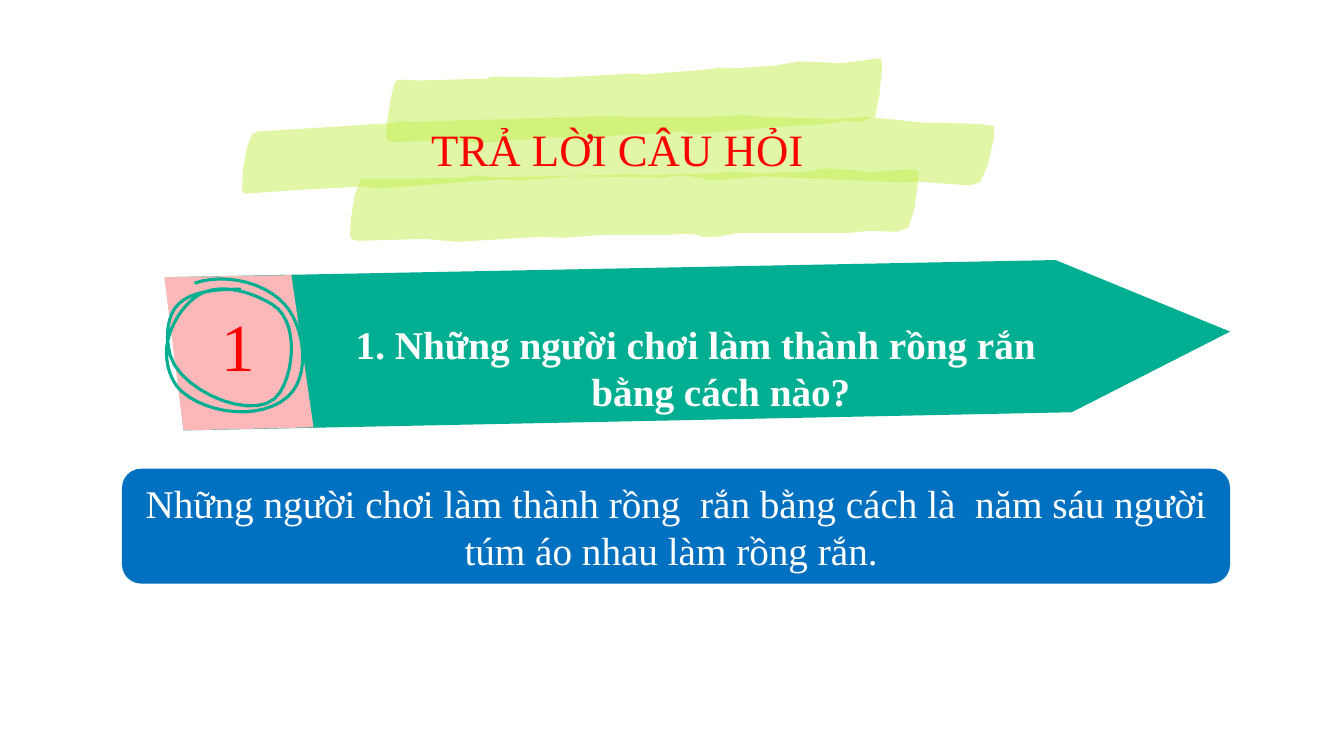
from lxml.etree import SubElement
from pptx import Presentation
from pptx.dml.color import RGBColor
from pptx.enum.shapes import MSO_SHAPE as Preset
from pptx.enum.text import MSO_ANCHOR as Anchor, MSO_AUTO_SIZE as AutoSize, PP_ALIGN as Align
from pptx.oxml.ns import qn
from pptx.util import Inches, Pt

COLORS = {"marker": "C4F150", "arrow": "00AF92", "tail": "FCB8B8",
          "answer": "0070C0", "red": "FF0000", "white": "FFFFFF"}

MARKER_STROKES = [
    [(7.37, 1.14), (7, 1.16), (6.23, 1.16), (6.1, 1.15), (5.7, 1.16), (4.08, 1.21),
     (3.97, 1.2), (3.9, 1.22), (2.63, 1.3), (2.57, 1.3), (2.5, 1.33), (2.45, 1.46),
     (2.41, 1.68), (2.4, 1.87), (2.42, 1.92), (2.44, 1.92), (3.04, 1.88), (3.59, 1.85),
     (3.78, 1.87), (4.94, 1.78), (5.17, 1.79), (5.67, 1.75), (6.6, 1.76), (6.74, 1.74),
     (6.94, 1.76), (7.02, 1.79), (7.2, 1.78), (7.57, 1.75), (8.95, 1.81), (9.09, 1.8),
     (9.61, 1.84), (9.72, 1.81), (9.8, 1.63), (9.86, 1.36), (9.86, 1.25), (9.72, 1.23),
     (9.4, 1.22), (9.19, 1.22), (8.91, 1.19), (8.61, 1.16), (8.25, 1.18), (7.56, 1.16)],
    [(8.16, 1.67), (8.05, 1.7), (7.52, 1.72), (7.25, 1.7), (7.12, 1.72), (6.38, 1.74),
     (6.27, 1.73), (4.96, 1.76), (4.67, 1.74), (4.62, 1.76), (3.79, 1.78), (3.61, 1.77),
     (3.57, 1.79), (3.52, 1.93), (3.48, 2.17), (3.47, 2.34), (3.5, 2.38), (3.56, 2.39),
     (4.21, 2.37), (4.53, 2.4), (5.35, 2.35), (5.57, 2.36), (6, 2.33), (6.66, 2.33),
     (6.78, 2.32), (6.91, 2.33), (6.97, 2.35), (7.1, 2.35), (7.34, 2.31), (8.43, 2.31),
     (8.62, 2.29), (8.89, 2.3), (9.01, 2.26), (9.07, 2.07), (9.11, 1.78), (9.1, 1.69),
     (9.02, 1.68), (8.62, 1.71), (8.5, 1.69)],
    [(8.7, 0.58), (8.33, 0.63), (8.21, 0.62), (7.92, 0.61), (7.7, 0.65), (7.28, 0.68),
     (7.14, 0.67), (7.01, 0.69), (6.37, 0.74), (6.29, 0.73), (5.54, 0.77), (4.88, 0.76),
     (4.83, 0.78), (4.13, 0.8), (3.96, 0.79), (3.92, 0.81), (3.88, 0.95), (3.84, 1.19),
     (3.83, 1.36), (3.85, 1.4), (3.92, 1.41), (4.48, 1.39), (4.75, 1.42), (5.5, 1.36),
     (5.67, 1.38), (6.16, 1.34), (6.62, 1.32), (6.75, 1.3), (6.89, 1.34), (7.01, 1.32),
     (7.7, 1.26), (8.17, 1.23), (8.39, 1.2), (8.53, 1.21), (8.68, 1.16), (8.72, 0.96),
     (8.75, 0.67), (8.74, 0.58)],
]
ARROW = [(1.82, 4.27), (10.63, 4.09), (12.2, 3.29), (10.47, 2.58), (1.66, 2.75)]
ARROW_TAIL = [(3.11, 4.24), (1.82, 4.27), (1.63, 2.75), (2.89, 2.73)]
RING = [(2.39, 2.87), (2.15, 2.87), (1.82, 2.88), (1.71, 3.1), (1.65, 3.23), (1.65, 3.39),
        (1.69, 3.53), (1.8, 3.9), (2.59, 4.22), (2.78, 3.89), (2.93, 3.64), (2.95, 3.17),
        (2.7, 3.02), (2.5, 2.9), (2.22, 2.81), (2, 2.91), (1.83, 3), (1.7, 3.2),
        (1.66, 3.4), (1.63, 3.57), (1.68, 3.78), (1.81, 3.89), (2.07, 4.11), (2.58, 4.17),
        (2.85, 3.94), (3.07, 3.75), (3.03, 3.32), (2.87, 3.08), (2.69, 2.81), (2.24, 2.7),
        (1.93, 2.81)]


def bezier_points(controls, steps=12):
    """Return points along a chain of cubic curves."""
    points = [controls[0]]
    for start in range(0, len(controls) - 1, 3):
        for step in range(1, steps + 1):
            t = step / steps
            weights = ((1 - t) ** 3, 3 * t * (1 - t) ** 2, 3 * t * t * (1 - t), t ** 3)
            points.append(tuple(
                sum(weight * control[axis] for weight, control
                    in zip(weights, controls[start:start + 4]))
                for axis in (0, 1)))
    return points


class SlideBuilder:
    """Holds the slide and its shared text style."""

    font_name = "Times New Roman"

    def __init__(self, slide):
        """Keep the slide to draw on."""
        self.slide = slide

    def color(self, name):
        """Return a named colour."""
        return RGBColor.from_string(COLORS[name])

    def set_text(self, shape, text, size, color, anchor=Anchor.TOP, bold=False, inset=None):
        """Put one centred paragraph into a shape."""
        frame = shape.text_frame
        frame.word_wrap = True
        frame.auto_size = AutoSize.NONE
        frame.vertical_anchor = anchor
        if inset is not None:
            frame.margin_left = frame.margin_right = Inches(inset)
            frame.margin_top = frame.margin_bottom = Inches(inset)
        frame.text = text
        paragraph = frame.paragraphs[0]
        paragraph.alignment = Align.CENTER
        paragraph.space_before = Pt(0)
        font = paragraph.font
        font.name, font.size, font.bold = self.font_name, Pt(size), bold
        font.color.rgb = self.color(color)
        return paragraph

    def placeholder(self, index, box, text, size, color, **style):
        """Move a placeholder to the front and fill it."""
        shape = self.slide.placeholders[index]
        shape.left, shape.top, shape.width, shape.height = map(Inches, box)
        shape.element.getparent().append(shape.element)
        return self.set_text(shape, text, size, color, inset=0.13, **style)

    def outline(self, points, closed=True):
        """Draw a freeform through the points."""
        corners = [(Inches(x), Inches(y)) for x, y in points]
        builder = self.slide.shapes.build_freeform(*corners[0])
        builder.add_line_segments(corners[1:], close=closed)
        shape = builder.convert_to_shape()
        shape.shadow.inherit = False
        return shape

    def polygon(self, points, color, opacity=100):
        """Draw a filled outline without a line."""
        shape = self.outline(points)
        self.paint(shape, color)
        if opacity < 100:
            tint = shape.element.spPr.find(qn("a:solidFill"))[0]
            SubElement(tint, qn("a:alpha")).set("val", str(opacity * 1000))
        return shape

    def paint(self, shape, color):
        """Fill a shape and hide its line."""
        shape.fill.solid()
        shape.fill.fore_color.rgb = self.color(color)
        shape.line.fill.background()

    def curve(self, controls, color, width):
        """Draw an open curved line."""
        shape = self.outline(bezier_points(controls), closed=False)
        shape.fill.background()
        shape.line.color.rgb = self.color(color)
        shape.line.width = Pt(width)
        return shape

    def label(self, box, text, size, color):
        """Add a text box."""
        shape = self.slide.shapes.add_textbox(*map(Inches, box))
        self.set_text(shape, text, size, color)
        return shape

    def panel(self, box, text, size, fill, color):
        """Add a rounded panel with centred text."""
        shape = self.slide.shapes.add_shape(Preset.ROUNDED_RECTANGLE, *map(Inches, box))
        shape.shadow.inherit = False
        self.paint(shape, fill)
        self.set_text(shape, text, size, color, anchor=Anchor.MIDDLE)

    def group(self, *shapes):
        """Group shapes."""
        self.slide.shapes.add_group_shape(shapes)


def main():
    """Build and save the question slide."""
    presentation = Presentation()
    presentation.slide_width, presentation.slide_height = Inches(13.33), Inches(7.5)
    builder = SlideBuilder(presentation.slides.add_slide(presentation.slide_layouts[0]))

    builder.group(*[builder.polygon(stroke, "marker", 50) for stroke in MARKER_STROKES])
    builder.group(builder.polygon(ARROW, "arrow"), builder.polygon(ARROW_TAIL, "tail"))
    question = builder.placeholder(
        1, (2.96, 3.05, 7.88, 0.83), "1. Những người chơi làm thành rồng rắn bằng cách nào?",
        28, "white", bold=True)
    properties = question._p.get_or_add_pPr()
    properties.set("marL", str(Inches(0.5)))
    properties.set("indent", str(Inches(-0.5)))
    builder.placeholder(0, (2.26, 0.69, 7.73, 1.18), "TRẢ LỜI CÂU HỎI", 32, "red",
                        anchor=Anchor.BOTTOM)
    builder.group(builder.curve(RING, "arrow", 2.25),
                  builder.label((1.98, 2.97, 0.77, 0.91), "1", 48, "red"))
    builder.panel(
        (1.21, 4.65, 10.99, 1.14),
        "Những người chơi làm thành rồng  rắn bằng cách là  năm sáu người túm áo nhau làm rồng rắn. ",
        28, "answer", "white")
    presentation.save("out.pptx")


if __name__ == "__main__":
    main()
